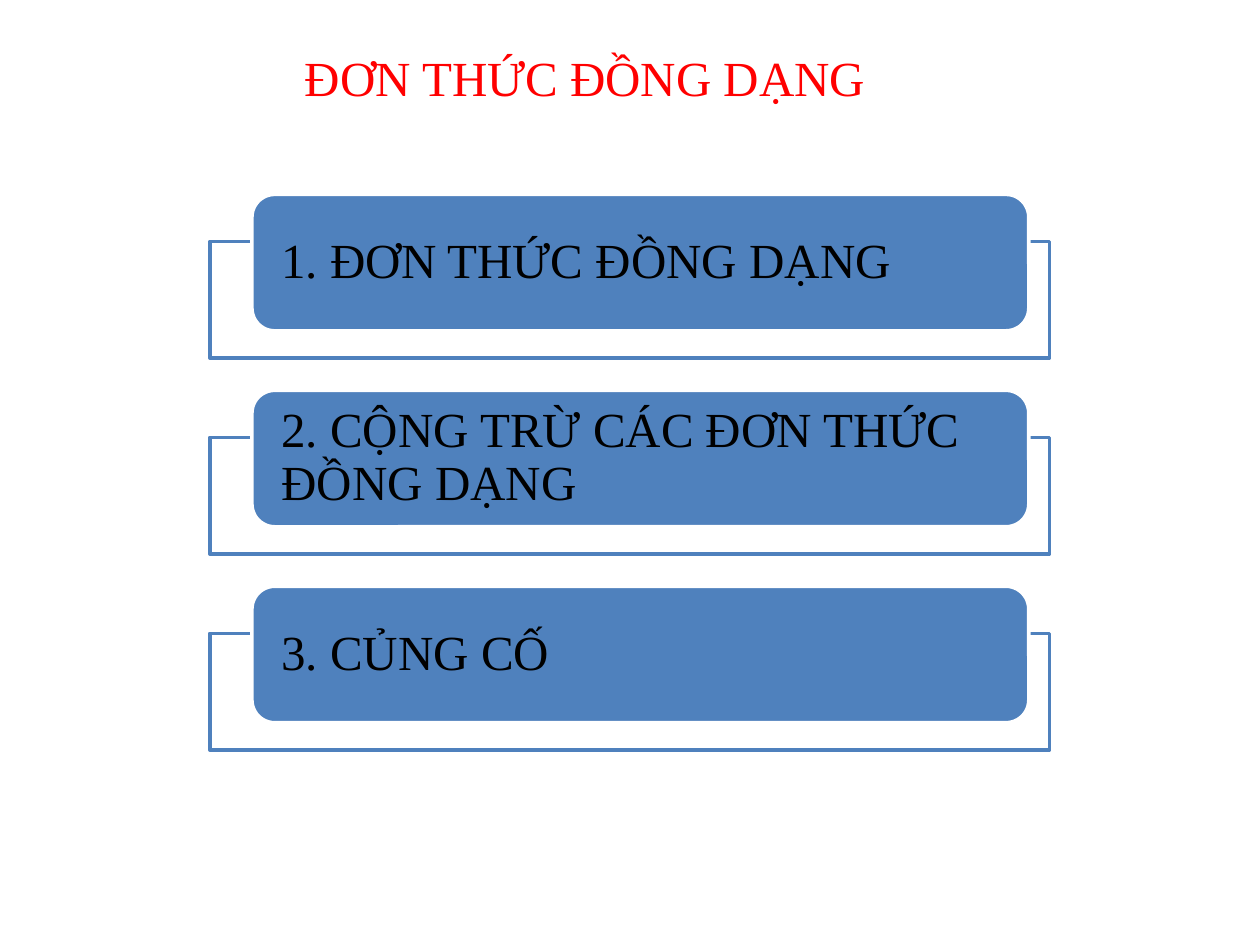
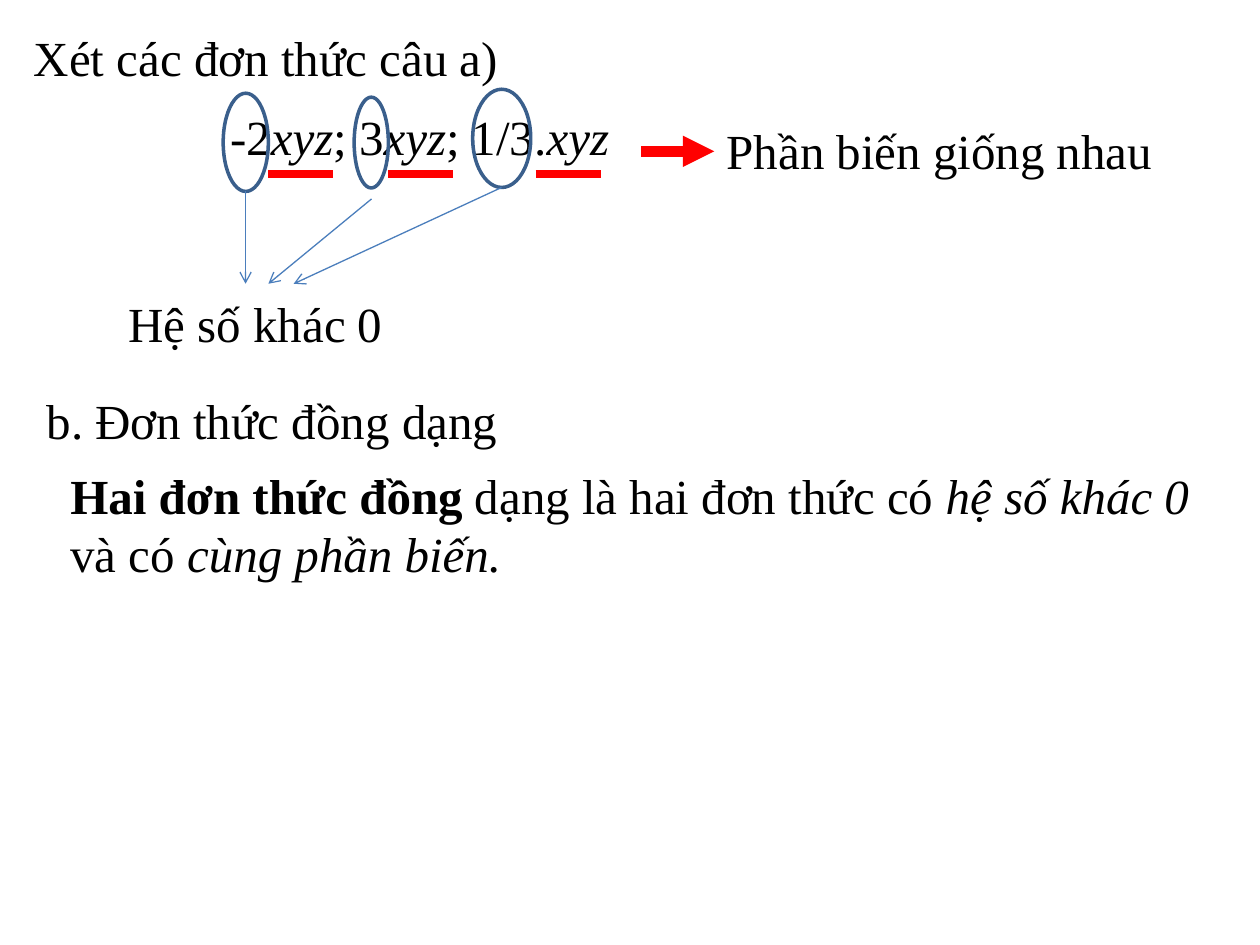
from pptx import Presentation, util as u
from pptx.dml.color import RGBColor
from pptx.enum import shapes, text
from pptx.oxml.ns import qn
from lxml import etree

INK = {"black": "000000", "red": "FF0000", "white": "FFFFFF",
       "blue": "4F81BD", "ring": "3A5F8C", "thin": "4B7EBC"}
FORM = shapes.MSO_SHAPE


class Deck:
    font = "Times New Roman"
    size = u.Pt(28)

    def __init__(self):
        self.prs = Presentation()
        self.prs.slide_width = u.Cm(25.4)
        self.prs.slide_height = u.Cm(19.05)
        self.slide = None

    def hue(self, name):
        return RGBColor.from_string(INK[name])

    def box(self, *nums):
        return [u.Cm(n) for n in nums]

    def page(self):
        self.slide = self.prs.slides.add_slide(self.prs.slide_layouts[5])

    def say(self, frame, runs, ink="black", wrap=True):
        frame.word_wrap = wrap
        frame.auto_size = text.MSO_AUTO_SIZE.NONE
        para = frame.paragraphs[0]
        para.alignment = text.PP_ALIGN.LEFT
        for words, style in runs:
            run = para.add_run()
            run.text = words
            font = run.font
            font.name, font.size = self.font, self.size
            font.color.rgb = self.hue(ink)
            font.bold, font.italic = style == "b", style == "i"
        return para

    def title(self, words, place, ink="black"):
        head = self.slide.shapes.title
        head.left, head.top, head.width, head.height = self.box(*place)
        head.text_frame.vertical_anchor = text.MSO_ANCHOR.TOP
        self.say(head.text_frame, [(words, "")], ink, False)

    def label(self, runs, place, wrap=False):
        item = self.slide.shapes.add_textbox(*self.box(*place))
        self.say(item.text_frame, runs, wrap=wrap)

    def shape(self, form, place, line, fill=None):
        item = self.slide.shapes.add_shape(form, *self.box(*place))
        item.shadow.inherit = False
        if fill:
            item.fill.solid()
            item.fill.fore_color.rgb = self.hue(fill)
        else:
            item.fill.background()
        item.line.color.rgb = self.hue(line)
        item.line.width = u.Pt(2)
        return item

    def bar(self, words, place):
        frame = self.shape(FORM.ROUNDED_RECTANGLE, place, "white", "blue").text_frame
        frame.margin_left = frame.margin_right = u.Cm(0.46)
        frame.margin_top = frame.margin_bottom = 0
        frame.vertical_anchor = text.MSO_ANCHOR.MIDDLE
        self.say(frame, [(words, "")]).line_spacing = 0.9

    def line(self, start, end, ink, width, tip=None):
        item = self.slide.shapes.add_connector(
            shapes.MSO_CONNECTOR.STRAIGHT, *self.box(*start, *end))
        item.line.color.rgb = self.hue(ink)
        item.line.width = u.Pt(width)
        props = item._element.spPr
        if tip:
            etree.SubElement(props.find(qn("a:ln")), qn("a:tailEnd"), type=tip)
        etree.SubElement(props, qn("a:effectLst"))


def outline(deck):
    deck.page()
    deck.title("ĐƠN THỨC ĐỒNG DẠNG", (5.89, 0.84, 11.94, 1.45), "red")
    parts = ["ĐƠN THỨC ĐỒNG DẠNG", "CỘNG TRỪ CÁC ĐƠN THỨC ĐỒNG DẠNG", "CỦNG CỐ"]
    for row, part in enumerate(parts):
        top = 3.92 + row * 3.95
        deck.shape(FORM.RECTANGLE, (4.23, top + 0.95, 16.93, 2.35), "blue", "white")
        deck.bar(f"{row + 1}. {part}", (5.08, top, 15.66, 2.75))


def terms(deck):
    deck.page()
    deck.title("Xét các đơn thức câu a)", (0.43, 0.43, 13.54, 1.45))
    deck.label([("-2", ""), ("xyz", "i"), ("; 3", ""), ("xyz", "i"),
                ("; 1/3.", ""), ("xyz", "i")], (4.39, 2.03, 8.23, 1.45))
    rings = [(4.5, 1.88, 0.91, 1.98), (7.14, 1.96, 0.69, 1.83), (9.53, 1.8, 1.17, 1.98)]
    for ring in rings:
        deck.shape(FORM.OVAL, ring, "ring")
    for start, end in [((4.95, 3.86), 4.95), ((7.49, 4.01), 5.41), ((10.11, 3.78), 5.92)]:
        deck.line(start, (end, 5.72), "thin", 0.75, "arrow")
    deck.label([("Hệ số khác 0", "")], (2.34, 5.79, 5.69, 1.45))
    for left in (5.41, 7.83, 10.8):
        deck.line((left, 3.51), (left + 1.31, 3.51), "red", 4.5)
    deck.label([("Phần biến giống nhau", "")], (14.4, 2.31, 9.17, 1.45))
    deck.line((12.93, 3.05), (14.4, 3.05), "red", 6, "triangle")
    deck.label([("Hai đơn thức đồng ", "b"), ("dạng là hai đơn thức có ", ""),
                ("hệ số khác 0 ", "i"), ("và có ", ""), ("cùng phần biến.", "i")],
               (1.17, 9.25, 23.5, 2.74), True)
    deck.label([("b. Đơn thức đồng dạng", "")], (0.69, 7.75, 9.93, 1.45))


def main():
    deck = Deck()
    outline(deck)
    terms(deck)
    deck.prs.save("out.pptx")


if __name__ == "__main__":
    main()
